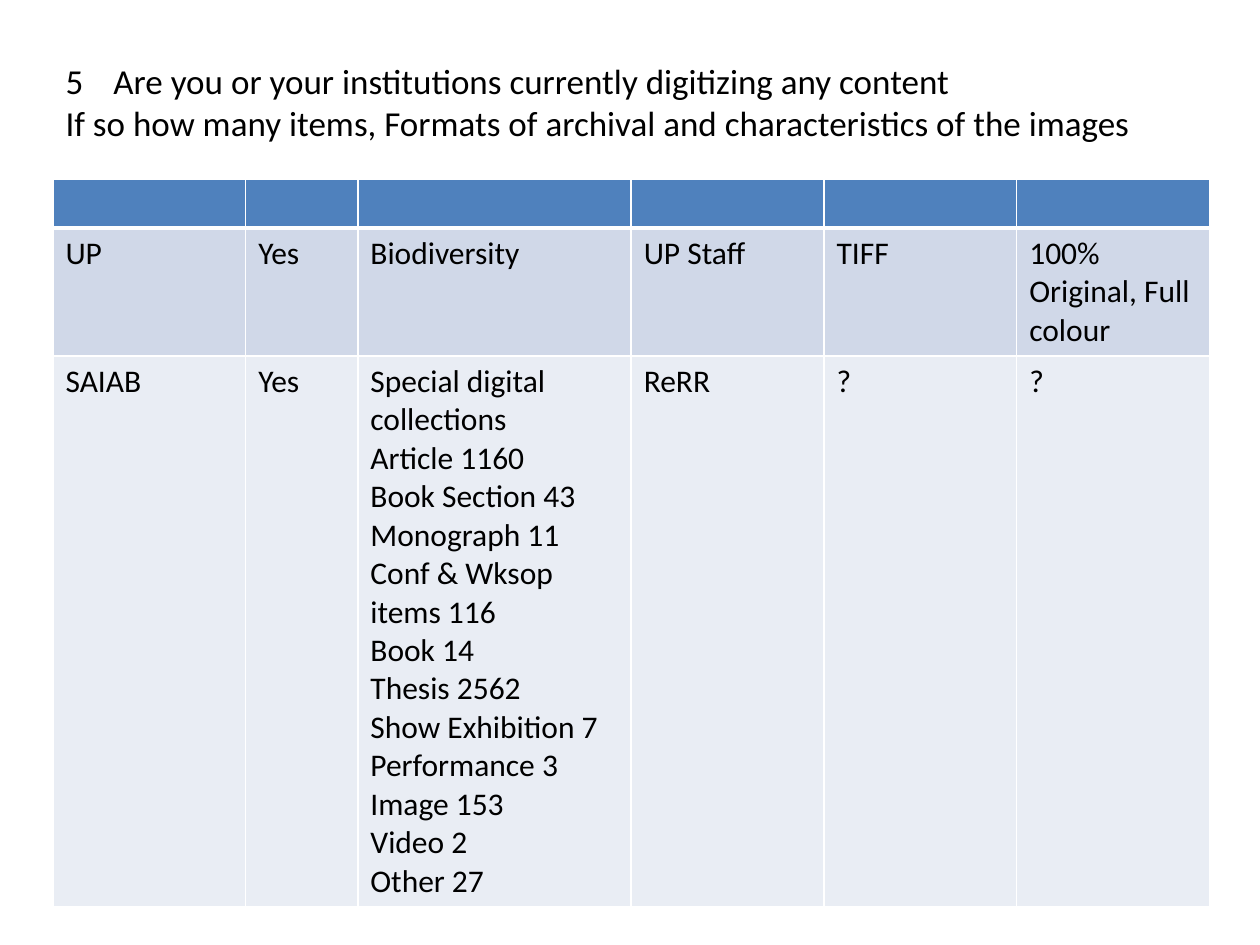
from lxml import etree
from pptx import Presentation
from pptx.dml.color import RGBColor
from pptx.enum import text
from pptx.oxml.ns import qn
from pptx.util import Inches, Pt

FONT = "Calibri"
INK, WHITE = "000000", "FFFFFF"
QUESTION = [
    "Are you or your institutions currently digitizing any content",
    "If so how many items, Formats of archival and characteristics of the images",
]
COLLECTIONS = [
    "Special digital collections", "Article 1160", "Book Section 43",
    "Monograph 11", "Conf & Wksop items 116", "Book 14", "Thesis 2562",
    "Show Exhibition 7", "Performance 3", "Image 153", "Video 2", "Other 27",
]
ANSWERS = [
    [[], [], [], [], [], []],
    [["UP"], ["Yes"], ["Biodiversity"], ["UP Staff"], ["TIFF"],
     ["100% Original, Full colour"]],
    [["SAIAB"], ["Yes"], COLLECTIONS, ["ReRR"], ["?"], ["?"]],
]
ROW_FILLS = ["4F81BD", "D0D8E8", "E9EDF4"]
ROW_HEIGHTS = [0.39, 1, 4.29]
COLUMN_WIDTHS = [1.53, 0.89, 2.17, 1.53, 1.53, 1.53]


def rgb(code):
    return RGBColor.from_string(code)


def write(frame, lines, size):
    for index, line in enumerate(lines):
        paragraph = frame.paragraphs[0] if index == 0 else frame.add_paragraph()
        run = paragraph.add_run()
        run.text = line
        run.font.name = FONT
        run.font.size = Pt(size)
        run.font.bold = False
        run.font.color.rgb = rgb(INK)


def add_borders(cell, widths):
    properties = cell._tc.get_or_add_tcPr()
    for position, (side, width) in enumerate(widths.items()):
        border = etree.Element(qn(f"a:ln{side}"), w=str(Pt(width)))
        fill = etree.SubElement(border, qn("a:solidFill"))
        etree.SubElement(fill, qn("a:srgbClr"), val=WHITE)
        properties.insert(position, border)


def add_question(slide):
    title = slide.shapes.title
    title.left, title.top = Inches(0.42), Inches(0.42)
    title.width, title.height = Inches(9.58), Inches(0.77)
    frame = title.text_frame
    frame.word_wrap = True
    frame.auto_size = text.MSO_AUTO_SIZE.NONE
    frame.vertical_anchor = text.MSO_ANCHOR.TOP
    write(frame, QUESTION, 20)
    for index, paragraph in enumerate(frame.paragraphs):
        paragraph.alignment = text.PP_ALIGN.LEFT
        properties = paragraph._p.get_or_add_pPr()
        properties.set("marL", str(Inches(0.38)))
        properties.set("indent", str(Inches(-0.38)))
        if index == 0:
            etree.SubElement(properties, qn("a:buAutoNum"),
                             type="arabicPlain", startAt="5")
        else:
            etree.SubElement(properties, qn("a:buNone"))


def add_answers(slide):
    table = slide.shapes.add_table(
        len(ANSWERS), len(COLUMN_WIDTHS), Inches(0.42), Inches(1.42),
        Inches(sum(COLUMN_WIDTHS)), Inches(sum(ROW_HEIGHTS))).table
    for column, width in zip(table.columns, COLUMN_WIDTHS):
        column.width = Inches(width)
    for index, (row, answers) in enumerate(zip(table.rows, ANSWERS)):
        row.height = Inches(ROW_HEIGHTS[index])
        widths = {"L": 1, "R": 1, "T": 3 if index == 1 else 1,
                  "B": 3 if index == 0 else 1}
        for cell, lines in zip(row.cells, answers):
            cell.fill.solid()
            cell.fill.fore_color.rgb = rgb(ROW_FILLS[index])
            add_borders(cell, widths)
            write(cell.text_frame, lines, 18)
            if not lines:
                cell.margin_top = cell.margin_bottom = 0


def main():
    deck = Presentation()
    deck.slide_width, deck.slide_height = Inches(10), Inches(7.5)
    slide = deck.slides.add_slide(deck.slide_layouts[5])
    add_question(slide)
    add_answers(slide)
    deck.save("out.pptx")


if __name__ == "__main__":
    main()
